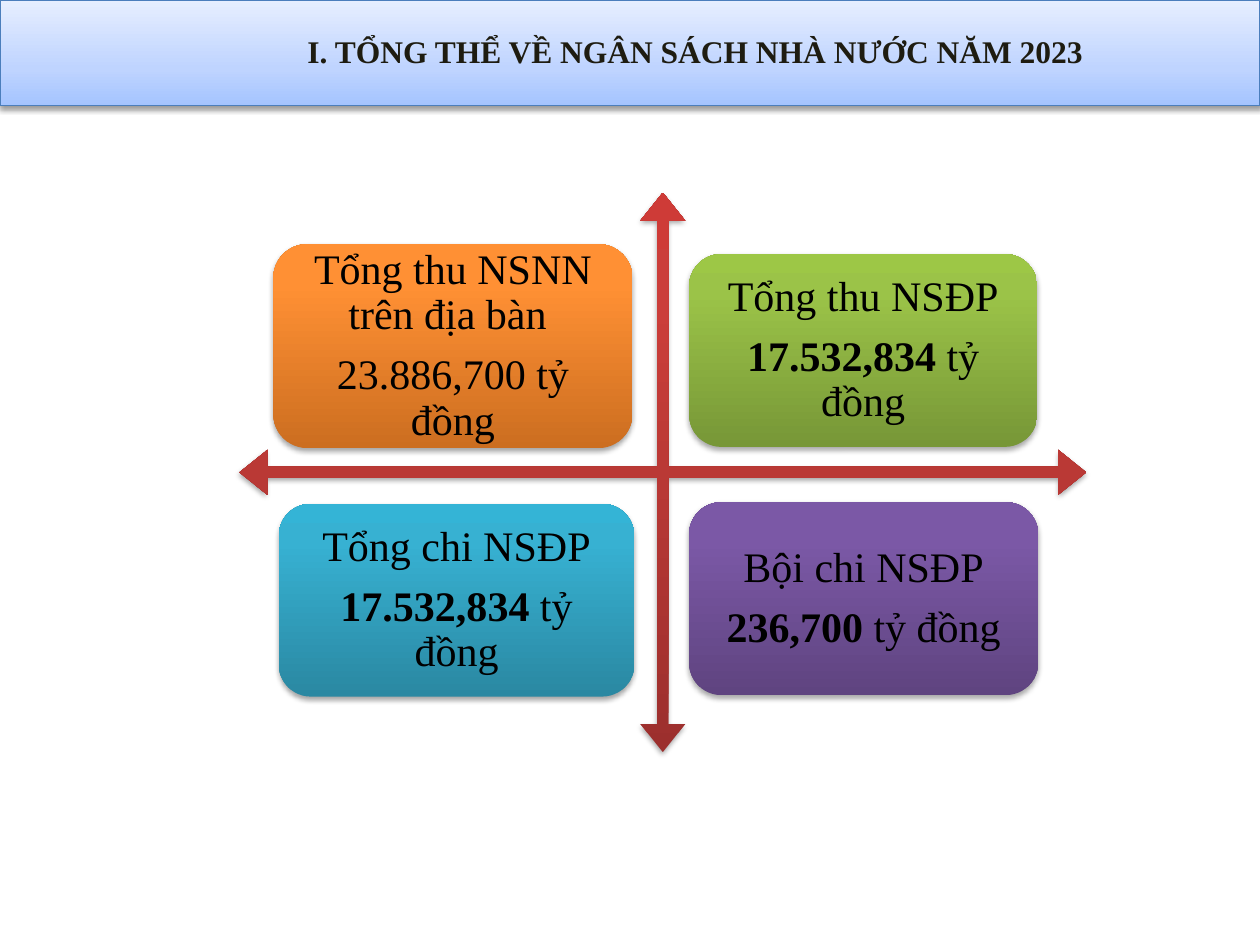
import pptx
import pptx.dml.color
import pptx.enum.shapes
import pptx.enum.text
import pptx.oxml
import pptx.oxml.ns
import pptx.util

Pt = pptx.util.Pt
Color = pptx.dml.color.RGBColor
Shape = pptx.enum.shapes.MSO_SHAPE
Anchor = pptx.enum.text.MSO_ANCHOR
CENTER = pptx.enum.text.PP_ALIGN.CENTER
qn = pptx.oxml.ns.qn

THEME = {
    "font": "Times New Roman",
    "title_size": 18,
    "body_size": 24,
    "title": "1E1C11",
    "body": "000000",
    "banner_line": "4B7EBC",
    "banner": [(0, "A4C4FF"), (35, "BFD4FF"), (100, "E6EEFF")],
    "arrows": [(0, "9C2F2D"), (80, "CB3E3A"), (100, "CE3B37")],
    "orange": [(0, "CC6E20"), (80, "FF9034"), (100, "FF9136")],
    "green": [(0, "779737"), (80, "9BC348"), (100, "9DC746")],
    "teal": [(0, "2A88A2"), (80, "37B1D2"), (100, "34B4D6")],
    "purple": [(0, "5F4480"), (80, "7B58A6"), (100, "7C57A8")],
}

TITLE = "I. TỔNG THỂ VỀ NGÂN SÁCH NHÀ NƯỚC NĂM 2023"
UNIT = "tỷ đồng"
QUADRANTS = [
    ("Tổng thu NSNN trên địa bàn ", "23.886,700 ", False, "orange", (156.2, 139.5, 205.2, 116.6)),
    ("Tổng thu NSĐP", "17.532,834 ", True, "green", (393.8, 145.2, 198.9, 110.2)),
    ("Tổng chi NSĐP", "17.532,834 ", True, "teal", (159.3, 287.9, 203.2, 110.2)),
    ("Bội chi NSĐP", "236,700 ", True, "purple", (393.8, 287, 199.5, 110.2)),
]


def add_gradient_shape(page, kind, place, stops, alpha, distance):
    shape = page.shapes.add_shape(kind, *map(Pt, place))
    shape.line.fill.background()
    shape.fill.gradient()
    shape.fill.gradient_angle = 90
    stop_list = shape._element.spPr.find(".//" + qn("a:gsLst"))
    for stop in list(stop_list):
        stop_list.remove(stop)
    namespace = pptx.oxml.ns.nsdecls("a")
    for position, color in stops:
        stop_list.append(pptx.oxml.parse_xml(
            f'<a:gs {namespace} pos="{position * 1000}"><a:srgbClr val="{color}"/></a:gs>'))
    shape.shadow.inherit = False
    shape._element.spPr.find(qn("a:effectLst")).append(pptx.oxml.parse_xml(
        f'<a:outerShdw {namespace} blurRad="{Pt(3.1)}" dist="{Pt(distance)}" dir="5400000" '
        f'rotWithShape="0"><a:srgbClr val="000000"><a:alpha val="{alpha * 1000}"/>'
        '</a:srgbClr></a:outerShdw>'))
    return shape


def set_frame(frame, margin, anchor):
    frame.word_wrap = True
    frame.vertical_anchor = anchor
    frame.margin_left = frame.margin_right = Pt(margin)
    frame.margin_top = frame.margin_bottom = Pt(margin)


def style_span(span, size, color, bold):
    span.font.name = THEME["font"]
    span.font.size = Pt(size)
    span.font.bold = bold
    span.font.color.rgb = Color.from_string(color)


def add_title(page):
    banner = add_gradient_shape(page, Shape.RECTANGLE, (0, 0, 720, 60.4), THEME["banner"], 38, 1.6)
    banner.line.color.rgb = Color.from_string(THEME["banner_line"])
    banner.line.width = Pt(0.75)
    box = page.shapes.add_textbox(Pt(123), Pt(18.4), Pt(548.8), Pt(43.6))
    set_frame(box.text_frame, 0, Anchor.TOP)
    box.text_frame.text = TITLE
    para = box.text_frame.paragraphs[0]
    para.alignment = CENTER
    style_span(para.runs[0], THEME["title_size"], THEME["title"], True)


def add_quadrant(page, label, amount, bold, color, place):
    box = add_gradient_shape(page, Shape.ROUNDED_RECTANGLE, place, THEME[color], 35, 1.8)
    frame = box.text_frame
    set_frame(frame, 7.2, Anchor.MIDDLE)
    frame.text = f"{label}\n{amount}"
    label_para, amount_para = frame.paragraphs
    amount_para.add_run().text = UNIT
    for para in frame.paragraphs:
        para.alignment = CENTER
        para.line_spacing = 0.9
        para.space_after = Pt(0.35 * THEME["body_size"])
        for span in para.runs:
            style_span(span, THEME["body_size"], THEME["body"], False)
    amount_para.runs[0].font.bold = bold


def main():
    deck = pptx.Presentation()
    deck.slide_width, deck.slide_height = Pt(720), Pt(540)
    page = deck.slides.add_slide(deck.slide_layouts[6])
    add_title(page)
    arrows = add_gradient_shape(
        page, Shape.QUAD_ARROW, (136.8, 110.1, 483.9, 319.7), THEME["arrows"], 35, 1.8)
    for index, value in enumerate((0.02, 0.04, 0.05)):
        arrows.adjustments[index] = value
    for quadrant in QUADRANTS:
        add_quadrant(page, *quadrant)
    deck.save("out.pptx")


if __name__ == "__main__":
    main()
